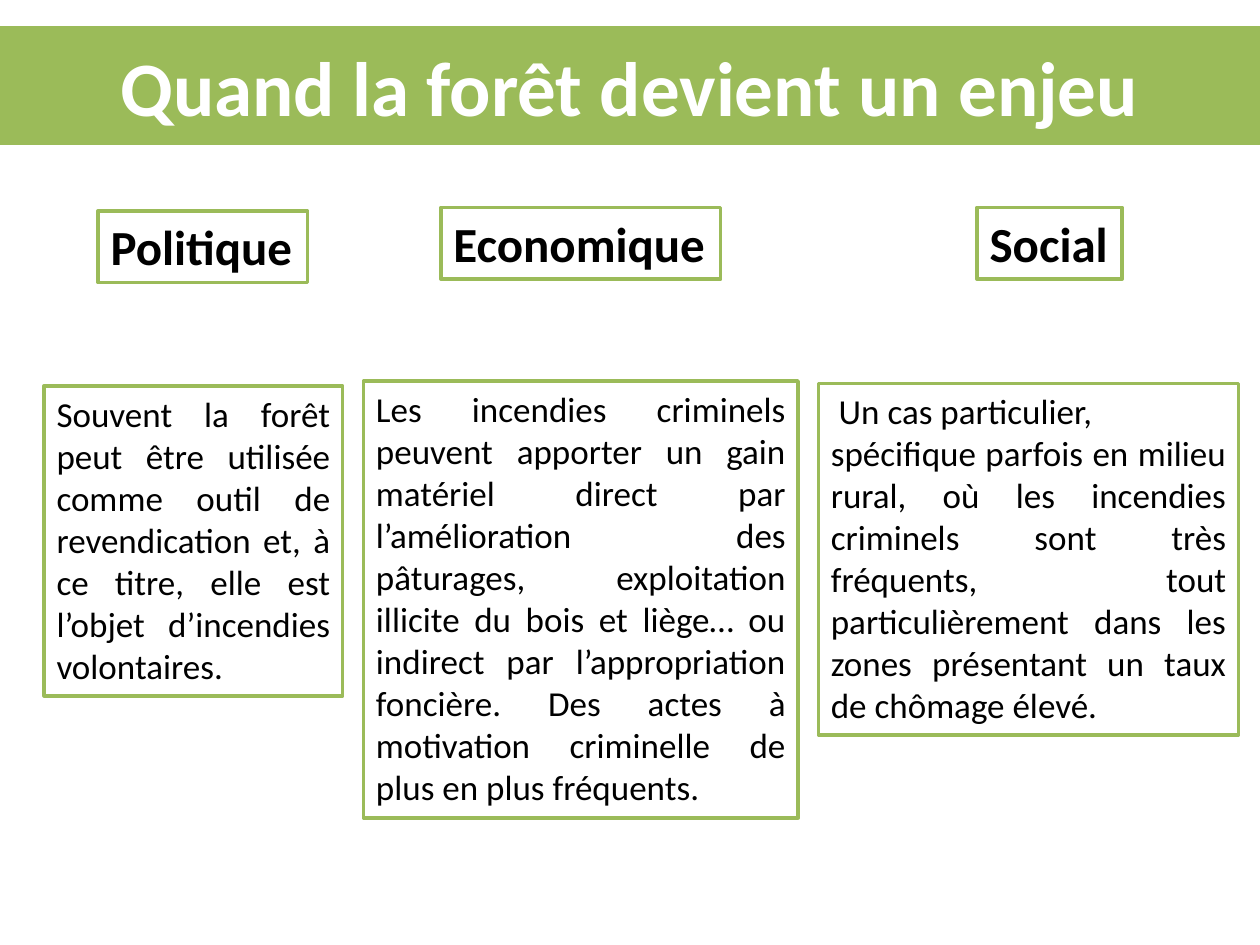
import pptx
import pptx.util
import pptx.dml.color
import pptx.enum.shapes
import pptx.enum.text
from dataclasses import dataclass

Cm = pptx.util.Cm
Pt = pptx.util.Pt
Align = pptx.enum.text.PP_ALIGN
Anchor = pptx.enum.text.MSO_ANCHOR
AutoSize = pptx.enum.text.MSO_AUTO_SIZE


@dataclass(frozen=True)
class Theme:
    font: str = "Calibri"
    green: str = "9BBB59"
    white: str = "FFFFFF"
    black: str = "000000"
    title_size: float = 44
    heading_size: float = 28
    body_size: float = 20
    title_line: float = 0.75
    box_line: float = 2


class SlideBuilder:
    """Holds the theme and the slide being filled."""

    def __init__(self, slide, theme):
        self.slide = slide
        self.theme = theme

    def paint(self, shape, fill, line_width):
        shape.fill.solid()
        shape.fill.fore_color.rgb = pptx.dml.color.RGBColor.from_string(fill)
        shape.line.color.rgb = pptx.dml.color.RGBColor.from_string(self.theme.green)
        shape.line.width = Pt(line_width)

    def format_text(self, frame, size, color, align, bold=False):
        for para in frame.paragraphs:
            para.alignment = align
            for span in para.runs:
                span.font.name = self.theme.font
                span.font.size = Pt(size)
                span.font.bold = bold
                span.font.color.rgb = pptx.dml.color.RGBColor.from_string(color)

    def title(self, text, left, top, width, height):
        banner = self.slide.shapes.title
        banner.left, banner.top = Cm(left), Cm(top)
        banner.width, banner.height = Cm(width), Cm(height)
        self.paint(banner, self.theme.green, self.theme.title_line)
        frame = banner.text_frame
        frame.text = text
        frame.vertical_anchor = Anchor.MIDDLE
        self.format_text(frame, self.theme.title_size, self.theme.white,
                         Align.CENTER, bold=True)

    def framed_box(self, text, place, wrap):
        box = self.slide.shapes.add_shape(
            pptx.enum.shapes.MSO_SHAPE.RECTANGLE, *(Cm(length) for length in place))
        box.shadow.inherit = False
        self.paint(box, self.theme.white, self.theme.box_line)
        frame = box.text_frame
        frame.text = text
        frame.word_wrap = wrap
        frame.auto_size = AutoSize.SHAPE_TO_FIT_TEXT
        frame.vertical_anchor = Anchor.TOP
        return frame

    def heading(self, text, place):
        frame = self.framed_box(text, place, wrap=False)
        self.format_text(frame, self.theme.heading_size, self.theme.black,
                         Align.LEFT, bold=True)

    def body(self, text, place):
        frame = self.framed_box(text, place, wrap=True)
        self.format_text(frame, self.theme.body_size, self.theme.black, Align.JUSTIFY)


# Each stake: heading, its place, explanation, its place (left, top, width, height in cm)
STAKES = [
    ("Politique", (1.98, 4.25, 4.22, 1.45),
     "Souvent la forêt peut être utilisée comme outil de revendication et, "
     "à ce titre, elle est l’objet d’incendies volontaires.",
     (0.89, 7.78, 6.02, 6.25)),
    ("Economique", (8.89, 4.18, 5.64, 1.45),
     "Les incendies criminels peuvent apporter un gain matériel direct par "
     "l’amélioration des pâturages, exploitation illicite du bois et liège… "
     "ou indirect par l’appropriation foncière. Des actes à motivation "
     "criminelle de plus en plus fréquents.",
     (7.33, 7.68, 8.76, 8.81)),
    ("Social", (19.7, 4.18, 2.92, 1.45),
     " Un cas particulier,\n"
     "spécifique parfois en milieu rural, où les incendies criminels sont très "
     "fréquents, tout particulièrement dans les zones présentant un taux de "
     "chômage élevé.",
     (16.5, 7.73, 8.47, 7.09)),
]


def main():
    deck = pptx.Presentation()
    deck.slide_width, deck.slide_height = Cm(25.4), Cm(19.05)
    title_only = deck.slide_layouts[5]
    page = SlideBuilder(deck.slides.add_slide(title_only), Theme())

    # Title banner
    page.title("Quand la forêt devient un enjeu", 0, 0.53, 25.4, 2.39)

    # One heading and one explanation per stake
    for name, name_place, explanation, explanation_place in STAKES:
        page.heading(name, name_place)
        page.body(explanation, explanation_place)

    deck.save("out.pptx")


if __name__ == "__main__":
    main()
